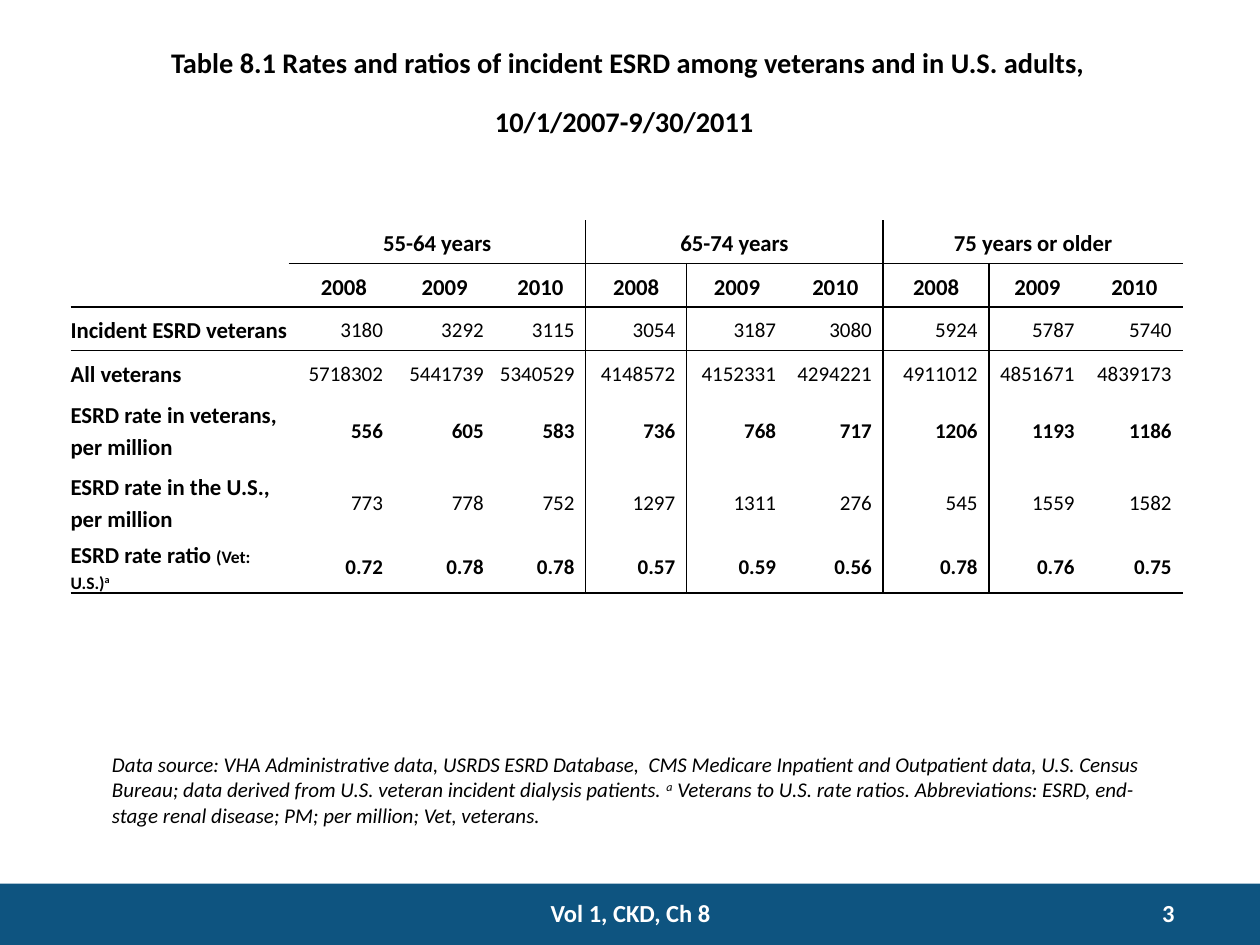
from lxml import etree
from pptx import Presentation
from pptx import util as u
from pptx.dml.color import RGBColor
from pptx.enum import shapes, text
from pptx.oxml import ns

rgb = RGBColor.from_string
LEFT, CENTER, RIGHT = text.PP_ALIGN.LEFT, text.PP_ALIGN.CENTER, text.PP_ALIGN.RIGHT


def add_run(paragraph, words, size, bold=False, italic=False, color="000000", raised=False):
    run = paragraph.add_run()
    run.text = words
    run.font.name = "Calibri"
    run.font.size = u.Pt(size)
    run.font.bold = bold
    run.font.italic = italic
    run.font.color.rgb = rgb(color)
    if raised:
        run.font._element.set("baseline", "30000")


def add_border(cell, side):
    line = etree.SubElement(cell._tc.get_or_add_tcPr(), ns.qn(f"a:{side}"), w=str(u.Pt(1)))
    fill = etree.SubElement(line, ns.qn("a:solidFill"))
    etree.SubElement(fill, ns.qn("a:srgbClr"), val="000000")


presentation = Presentation()
presentation.slide_width = u.Inches(10)
presentation.slide_height = u.Inches(7.5)
width, height = presentation.slide_width, presentation.slide_height
slide = presentation.slides.add_slide(presentation.slide_layouts[6])

band_top = int(height * 0.935)
band = slide.shapes.add_shape(
    shapes.MSO_SHAPE.RECTANGLE, 0, band_top, width, height - band_top)
band.shadow.inherit = False
band.fill.solid()
band.fill.fore_color.rgb = rgb("0E5480")
band.line.fill.background()

plain = dict(size=12, italic=True)
heading = dict(size=28, bold=True, raised=True)
footer = dict(size=14, bold=True, color="FFFFFF")
text_boxes = [
    (0.079, 0.789, 0.842, 0.095, LEFT, [
        [("Data source: VHA Administrative data, USRDS ESRD Database,  CMS Medicare "
          "Inpatient and Outpatient data, U.S. Census Bureau; data derived from U.S. "
          "veteran incident dialysis patients. ", plain),
         ("a", dict(plain, raised=True)),
         (" Veterans to U.S. rate ratios. Abbreviations: ESRD, end-stage renal disease; "
          "PM; per million; Vet, veterans.", plain)]]),
    (-0.002, 0.035, 1, 0.097, CENTER, [
        [(" Table 8.1 Rates and ratios of incident ESRD among veterans and in U.S. adults, ",
          heading)],
        [("10/1/2007-9/30/2011 ", heading)]]),
    (0.392, 0.944, 0.217, 0.044, CENTER, [[("Vol 1, CKD, Ch 8", footer)]]),
    (0.842, 0.944, 0.1, 0.04, RIGHT, [[("3", footer)]]),
]
for left, top, wide, high, align, paragraphs in text_boxes:
    shape = slide.shapes.add_textbox(
        int(width * left), int(height * top), int(width * wide), int(height * high))
    frame = shape.text_frame
    frame.word_wrap = True
    for index, runs in enumerate(paragraphs):
        paragraph = frame.add_paragraph() if index else frame.paragraphs[0]
        paragraph.alignment = align
        for words, style in runs:
            add_run(paragraph, words, **style)

column_shares = [0.173, 0.003, 0.08, 0.08, 0.072, 0.08, 0.08, 0.076, 0.084, 0.077, 0.077]
row_shares = [0.046] * 4 + [0.076] * 2 + [0.046]
last_row = len(row_shares) - 1
table = slide.shapes.add_table(
    len(row_shares), len(column_shares), int(width * 0.056), int(height * 0.233),
    int(width * sum(column_shares)), int(height * sum(row_shares))).table
table.first_row = table.horz_banding = False
table._tbl.tblPr.find(ns.qn("a:tableStyleId")).text = "{2D5ABB26-0587-4C30-8999-92F81FD0307C}"
for column, share in zip(table.columns, column_shares):
    column.width = int(width * share)
for row, share in zip(table.rows, row_shares):
    row.height = int(height * share)

groups = [(1, 4, "55-64 years"), (5, 7, "65-74 years"), (8, 10, "75 years or older")]
group_ends = {first: last for first, last, name in groups}
for row in range(len(row_shares)):
    for column in range(len(column_shares)):
        cell = table.cell(row, column)
        cell.margin_left = cell.margin_right = cell.margin_top = cell.margin_bottom = 0
        cell.vertical_anchor = text.MSO_ANCHOR.MIDDLE
        end = group_ends.get(column, column) if row == 0 else column
        if column in (5, 8):
            add_border(cell, "lnL")
        if end in (4, 7):
            add_border(cell, "lnR")
        if row in (1, 2) and (row == 2 or column > 1):
            add_border(cell, "lnT")
        if row in (1, last_row) or (row == 0 and column > 0):
            add_border(cell, "lnB")
        cell.fill.background()

for first, last, name in groups:
    table.cell(0, first).merge(table.cell(0, last))
    paragraph = table.cell(0, first).text_frame.paragraphs[0]
    paragraph.alignment = CENTER
    paragraph.line_spacing = 1.15
    add_run(paragraph, name, 13, bold=True)

measures = [
    ([], ["2008", "2009", "2010"] * 3, True),
    (["Incident ESRD veterans"],
     "3180 3292 3115 3054 3187 3080 5924 5787 5740".split(), False),
    (["All veterans"],
     "5718302 5441739 5340529 4148572 4152331 4294221 4911012 4851671 4839173".split(), False),
    (["ESRD rate in veterans,", "per million"],
     "556 605 583 736 768 717 1206 1193 1186".split(), True),
    (["ESRD rate in the U.S.,", "per million"],
     "773 778 752 1297 1311 276 545 1559 1582".split(), False),
    (["ESRD rate ratio "],
     "0.72 0.78 0.78 0.57 0.59 0.56 0.78 0.76 0.75".split(), True),
]
for row, (label_lines, values, bold) in enumerate(measures, start=1):
    table.cell(row, 0).merge(table.cell(row, 1))
    label = table.cell(row, 0).text_frame.paragraphs[0]
    label.line_spacing = 1.15
    for index, words in enumerate(label_lines):
        if index:
            label.add_line_break()
        add_run(label, words, 13, bold=True)
    if row == last_row:
        add_run(label, "(Vet: U.S.)", 10, bold=True)
        add_run(label, "a", 10, bold=True, raised=True)
    for column, value in enumerate(values, start=2):
        cell = table.cell(row, column)
        paragraph = cell.text_frame.paragraphs[0]
        paragraph.line_spacing = 1.15
        paragraph.alignment = CENTER if row == 1 else RIGHT
        if row > 1:
            cell.margin_right = u.Inches(0.09)
        add_run(paragraph, value, 13 if row == 1 else 12, bold=bold)

presentation.save("out.pptx")
